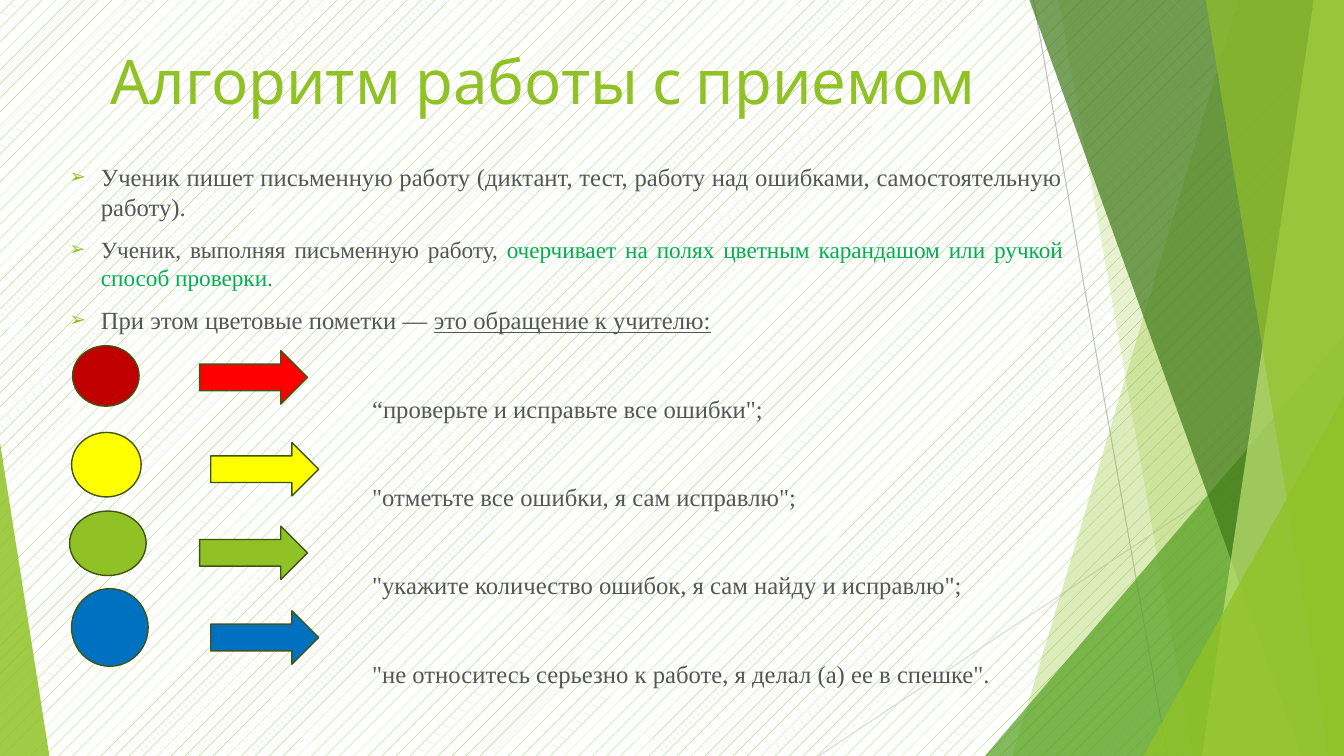
from lxml import etree
from pptx import Presentation
from pptx.dml.color import RGBColor
from pptx.enum.dml import MSO_PATTERN
from pptx.enum.shapes import MSO_CONNECTOR, MSO_SHAPE
from pptx.enum.text import MSO_ANCHOR, MSO_AUTO_SIZE, PP_ALIGN
from pptx.oxml.ns import qn
from pptx.util import Inches, Pt

OVAL, ARROW = MSO_SHAPE.OVAL, MSO_SHAPE.RIGHT_ARROW
TRI, LINE = MSO_SHAPE.ISOSCELES_TRIANGLE, MSO_CONNECTOR.STRAIGHT
MID, JUST = PP_ALIGN.CENTER, PP_ALIGN.JUSTIFY
WIDE, HIGH = 13.33, 7.5
LIME, GRAY, EDGE = "90C226", "555555", "3F5511"
SERIF = "Times New Roman"

TITLE = "Алгоритм работы с приемом"
STEPS = [
    (17.6, [("Ученик пишет письменную работу (диктант, тест, работу над "
             "ошибками, самостоятельную работу).", {})]),
    (16.6, [("Ученик, выполняя письменную работу, ", {}),
            ("очерчивает на полях цветным карандашом или ручкой "
             "способ проверки.", {"color": "00B050"})]),
    (17.6, [("При этом цветовые пометки — ", {}),
            ("это обращение к учителю:", {"under": True})]),
]
NOTES = [
    "“проверьте и исправьте все ошибки\";",
    "\"отметьте все ошибки, я сам исправлю\";",
    "\"укажите количество ошибок, я сам найду и исправлю\";",
    "\"не относитесь серьезно к работе, я делал (а) ее в спешке\".",
]
MARKS = [
    ("C00000", (0.72, 3.43, 0.66, 0.6), "FF0000", (1.98, 3.48)),
    ("FFFF00", (0.71, 4.29, 0.69, 0.64), "FFFF00", (2.09, 4.39)),
    (LIME, (0.69, 5.07, 0.76, 0.64), LIME, (1.98, 5.22)),
    ("0070C0", (0.71, 5.84, 0.76, 0.77), "0070C0", (2.09, 6.06)),
]
RAYS = [((10.25, 0), (11.58, HIGH), "BFBFBF"),
        ((WIDE, 4.03), (8.12, HIGH), "D9D9D9")]
BANDS = [
    ("band", 12.28, 10.04, LIME, 30),
    ("band", 10.5, 11.83, LIME, 20),
    ("tri", (9.77, 3.33, 3.56), 1, "54A021", 72),
    ("band", 10.21, 12.91, "3F7819", 70),
    ("band", 13.03, 11.92, "C0E474", 70),
    ("band", 11.96, 13.18, LIME, 65),
    ("tri", (11.34, 3.93, 1.99), 1, LIME, 80),
    ("tri", (0, 4.39, 0.49), 0, LIME, 85),
]


def rgb(code):
    return RGBColor.from_string(code)


def sub(node, tag, **attrs):
    return etree.SubElement(node, qn(tag), attrs)


def paint(shape, color, alpha=100, edge=None):
    shape.shadow.inherit = False
    shape.fill.solid()
    shape.fill.fore_color.rgb = rgb(color)
    if alpha < 100:
        tone = shape.element.spPr.find(qn("a:solidFill"))[0]
        sub(tone, "a:alpha", val=str(alpha * 1000))
    if edge:
        shape.line.color.rgb = rgb(edge)
        shape.line.width = Pt(1)
    else:
        shape.line.fill.background()


def write(para, text, size=17.6, font=SERIF, color=GRAY, under=None):
    run = para.add_run()
    run.text = text
    face = run.font
    face.size, face.name, face.underline = Pt(size), font, under
    face.color.rgb = rgb(color)


def indent(para, left, hang, gap, mark=None):
    para.alignment, para.space_before = JUST, Pt(gap)
    props = para._p.get_or_add_pPr()
    props.set("marL", str(Inches(left)))
    props.set("indent", str(Inches(-hang)))
    if mark:
        sub(sub(props, "a:buClr"), "a:srgbClr", val=LIME)
        sub(props, "a:buSzPct", val="80000")
        sub(props, "a:buChar", char=mark)
    else:
        sub(props, "a:buNone")


def place(holder, box, anchor):
    holder.left, holder.top, holder.width, holder.height = map(Inches, box)
    frame = holder.text_frame
    frame.word_wrap, frame.auto_size = True, MSO_AUTO_SIZE.NONE
    frame.vertical_anchor = anchor
    holder.element.getparent().append(holder.element)
    return frame


def decor(shapes):
    for start, end, color in RAYS:
        ray = shapes.add_connector(LINE, *map(Inches, start + end))
        ray.line.color.rgb, ray.line.width = rgb(color), Pt(0.75)
        sub(ray.element.spPr, "a:effectLst")
    for kind, first, second, color, alpha in BANDS:
        if kind == "band":
            pen = shapes.build_freeform(Inches(first), 0)
            rest = [(WIDE, 0), (WIDE, HIGH), (second, HIGH)]
            pen.add_line_segments([(Inches(x), Inches(y)) for x, y in rest])
            part = pen.convert_to_shape()
        else:
            left, top, width = first
            box = left, top, width, HIGH - top
            part = shapes.add_shape(TRI, *map(Inches, box))
            part.adjustments[0] = second
        paint(part, color, alpha)


def main():
    """Build the slide and save it."""
    deck = Presentation()
    deck.slide_width, deck.slide_height = Inches(WIDE), Inches(HIGH)
    slide = deck.slides.add_slide(deck.slide_layouts[1])
    shapes = slide.shapes
    back = slide.background.fill
    back.patterned()
    back.pattern = MSO_PATTERN.PERCENT_5
    back.fore_color.rgb, back.back_color.rgb = rgb(LIME), rgb("FFFFFF")
    decor(shapes)

    frame = place(shapes.title, (0.69, 0.27, 9.4, 0.94), MSO_ANCHOR.BOTTOM)
    head = frame.paragraphs[0]
    head.alignment = MID
    write(head, TITLE, size=44, font="Cabin", color=LIME)

    body = place(slide.placeholders[1], (0.59, 1.56, 10.05, 4.97),
                 MSO_ANCHOR.TOP)
    for num, (size, runs) in enumerate(STEPS):
        para = body.add_paragraph() if num else body.paragraphs[0]
        indent(para, 0.31, 0.31, 10, "➢")
        for text, style in runs:
            write(para, text, size=size, **style)
    for text in NOTES:
        para = body.add_paragraph()
        indent(para, 3, 0, 42)
        write(para, text)

    for color, box, tint, spot in MARKS:
        paint(shapes.add_shape(OVAL, *map(Inches, box)), color, edge=EDGE)
        arrow = shapes.add_shape(ARROW, *map(Inches, spot + (1.07, 0.53)))
        paint(arrow, tint, edge=EDGE)
    deck.save("out.pptx")


if __name__ == "__main__":
    main()
